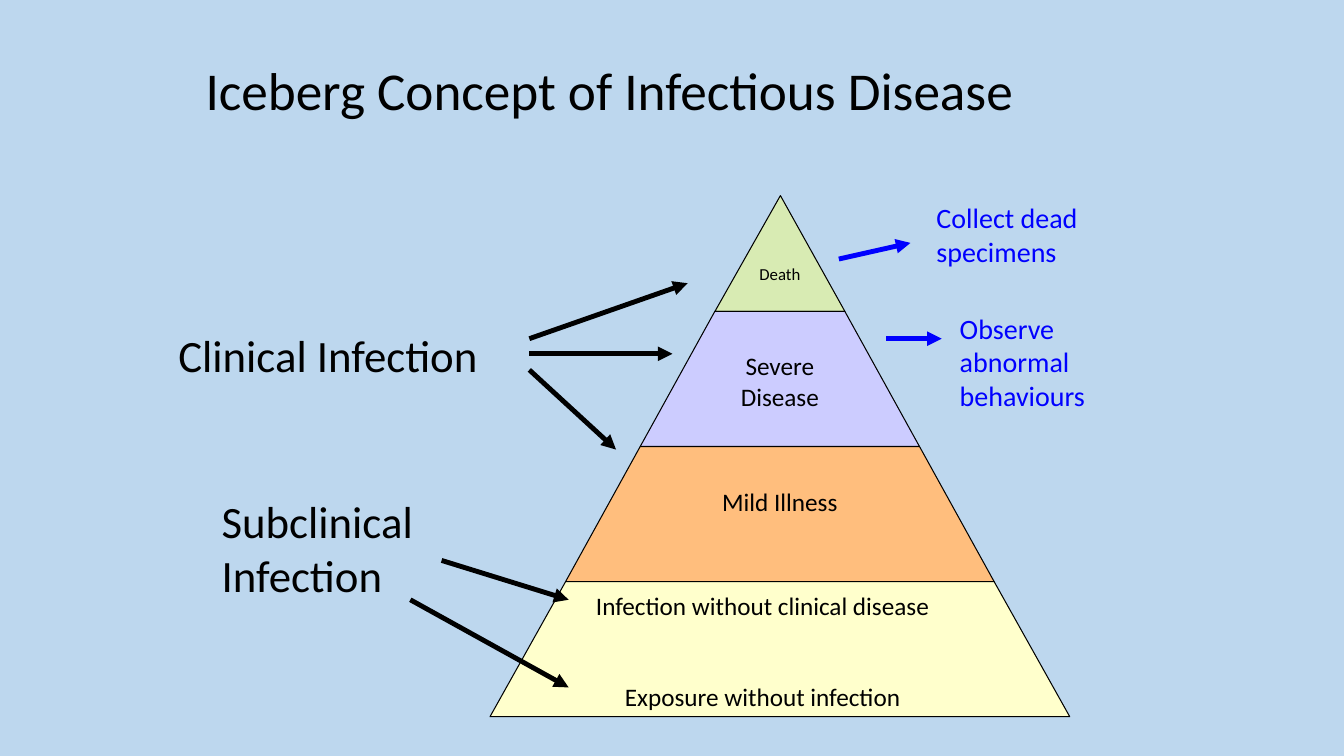
from itertools import pairwise

from lxml import etree
from pptx import Presentation
from pptx import util as u
from pptx.dml.color import RGBColor
from pptx.enum import shapes, text
from pptx.oxml import ns

PX = 9144  # EMU per px, 100 px to the inch
FONT = "Calibri"
BLACK, BLUE, SKY = "000000", "0000FF", "BDD7EE"

# y, left and right of the pyramid's outline at each tier boundary
LEVELS = [
    (194, 774, 774),
    (309, 709, 838),
    (443, 635, 912),
    (577, 561, 986),
    (711, 486, 1061),
]
# fill, paragraphs, text size, insets (left, top, right)
TIERS = [
    ("D8EBB3", ["Death"], 12, (10, 68, 10)),
    ("CCCCFF", ["Severe Disease"], 18, (80, 39, 80)),
    ("FFBE7D", ["Mild Illness"], 18, (10, 39, 10)),
    ("FFFFCC", ["Infection without clinical disease", "Exposure without infection"],
     18, (10, 9, 44)),
]
LABELS = [
    ("Clinical Infection", (167, 320, 354, 63), 32, BLACK),
    ("Subclinical Infection", (210, 485, 236, 117), 32, BLACK),
    ("Collect dead specimens", (919, 194, 197, 77), 20, BLUE),
    ("Observe abnormal behaviours", (942, 304, 189, 110), 20, BLUE),
]
ARROWS = [
    ((525, 336), (682, 281), BLACK),
    ((525, 351), (667, 351), BLACK),
    ((438, 556), (564, 595), BLACK),
    ((407, 595), (564, 682), BLACK),
    ((525, 367), (611, 446), BLACK),
    ((832, 257), (903, 241), BLUE),
    ((879, 336), (934, 336), BLUE),
]


def px(*lengths):
    return [u.Emu(length * PX) for length in lengths]


def rgb(value):
    return RGBColor.from_string(value)


def style_paragraph(paragraph, size, color):
    for run in paragraph.runs:
        run.font.name = FONT
        run.font.size = u.Pt(size)
        run.font.color.rgb = rgb(color)


def add_label(slide, wording, box, size, color):
    label = slide.shapes.add_textbox(*px(*box))
    frame = label.text_frame
    frame.word_wrap = True
    frame.text = wording
    style_paragraph(frame.paragraphs[0], size, color)
    return frame


def add_tier(pyramid, top, bottom, fill, lines, size, insets):
    (y1, left1, right1), (y2, left2, right2) = top, bottom
    builder = pyramid.shapes.build_freeform(left1, y1, scale=PX)
    builder.add_line_segments([(right1, y1), (right2, y2), (left2, y2)], close=True)
    tier = builder.convert_to_shape()
    tier.shadow.inherit = False
    tier.fill.solid()
    tier.fill.fore_color.rgb = rgb(fill)
    tier.line.color.rgb = rgb(BLACK)
    tier.line.width = u.Pt(0.75)

    frame = tier.text_frame
    frame.word_wrap = True
    frame.vertical_anchor = text.MSO_ANCHOR.TOP
    frame.margin_left, frame.margin_top, frame.margin_right = px(*insets)
    frame.margin_bottom = 0
    frame.text = "\n".join(lines)
    for paragraph in frame.paragraphs:
        paragraph.alignment = text.PP_ALIGN.CENTER
        style_paragraph(paragraph, size, BLACK)
    for paragraph in frame.paragraphs[1:]:
        paragraph.space_before = u.Pt(43)


def add_arrow(slide, start, end, color):
    arrow = slide.shapes.add_connector(
        shapes.MSO_CONNECTOR.STRAIGHT, *px(*start, *end))
    arrow.line.color.rgb = rgb(color)
    arrow.line.width = u.Pt(3.5)
    etree.SubElement(arrow.line._get_or_add_ln(), ns.qn("a:tailEnd"), type="triangle")
    etree.SubElement(arrow._element.spPr, ns.qn("a:effectLst"))


def main():
    deck = Presentation()
    deck.slide_width, deck.slide_height = px(1333, 750)
    slide = deck.slides.add_slide(deck.slide_layouts[6])
    slide.background.fill.solid()
    slide.background.fill.fore_color.rgb = rgb(SKY)

    title = add_label(slide, "Iceberg Concept of Infectious Disease",
                      (194, 30, 945, 125), 38, BLACK)
    title.vertical_anchor = text.MSO_ANCHOR.MIDDLE
    title.paragraphs[0].line_spacing = 0.9

    pyramid = slide.shapes.add_group_shape()
    for (top, bottom), tier in zip(pairwise(LEVELS), TIERS):
        add_tier(pyramid, top, bottom, *tier)
    for label in LABELS:
        add_label(slide, *label)
    for arrow in ARROWS:
        add_arrow(slide, *arrow)

    deck.save("out.pptx")


if __name__ == "__main__":
    main()
